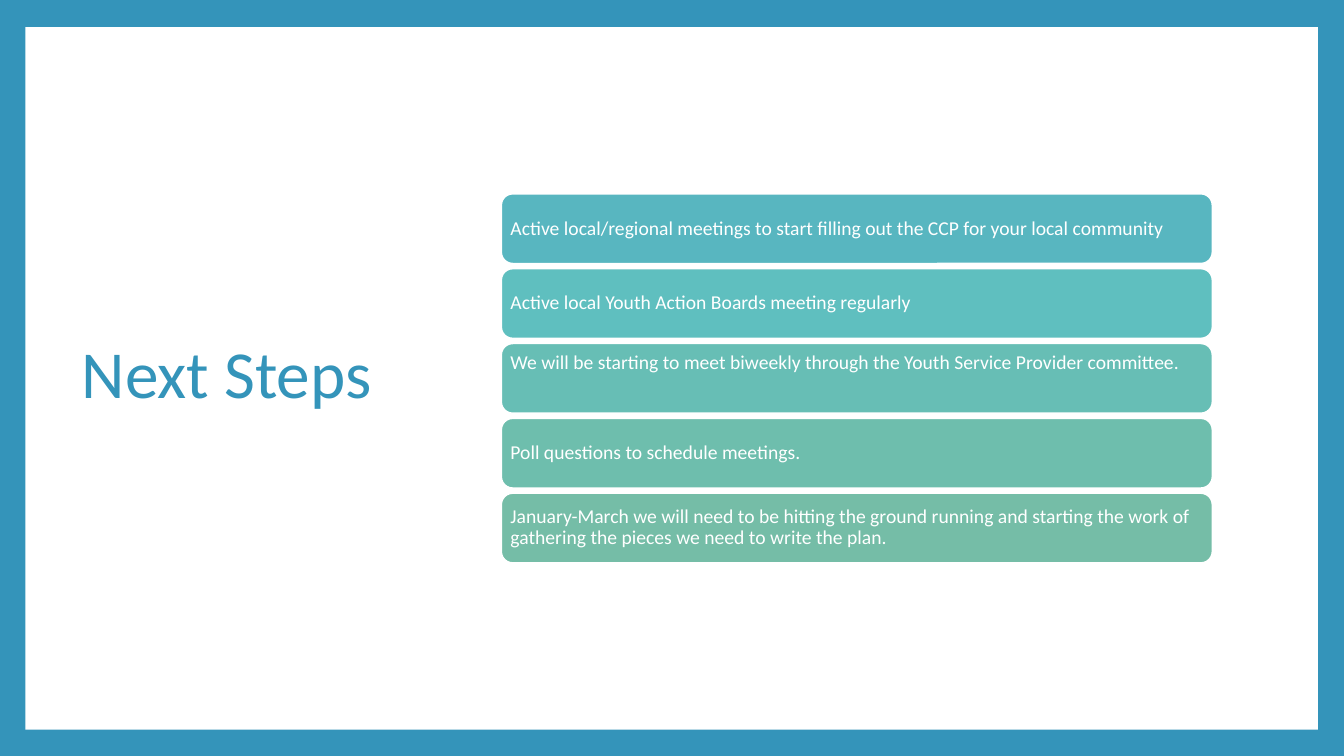
from dataclasses import dataclass

import pptx
import pptx.dml.color
import pptx.enum.shapes
import pptx.enum.text
import pptx.util

SLIDE_WIDTH = pptx.util.Inches(13.33)
SLIDE_HEIGHT = pptx.util.Inches(7.5)
FONT = "Calibri"
COLOURS = {
    "blue": "3494BA",
    "white": "FFFFFF",
    "step 1": "58B6C0",
    "step 2": "5FBFBF",
    "step 3": "67BEB5",
    "step 4": "6EBEAD",
    "step 5": "75BDA7",
}
ANCHOR = pptx.enum.text.MSO_ANCHOR
SHAPE = pptx.enum.shapes.MSO_SHAPE

# Step bars, in percent of the slide's width and height
BAR_LEFT, BAR_WIDTH = 37.28, 52.95
BAR_TOP, BAR_HEIGHT, BAR_PITCH = 25.6, 9.3, 9.9


@dataclass
class Area:
    """A place on the slide, in percent of its width and height."""
    left: float
    top: float
    width: float
    height: float

    def lengths(self) -> tuple[int, int, int, int]:
        return (int(SLIDE_WIDTH * self.left / 100), int(SLIDE_HEIGHT * self.top / 100),
                int(SLIDE_WIDTH * self.width / 100), int(SLIDE_HEIGHT * self.height / 100))


@dataclass
class Step:
    text: str
    colour: str
    anchor: ANCHOR = ANCHOR.MIDDLE


PANEL = Area(1.88, 3.6, 96.17, 92.93)
TITLE = Area(5.33, 8.93, 27.6, 81.73)
STEPS = [
    Step("Active local/regional meetings to start filling out the CCP for your local community",
         "step 1"),
    Step("Active local Youth Action Boards meeting regularly", "step 2"),
    Step("We will be starting to meet biweekly through the Youth Service Provider committee.",
         "step 3", ANCHOR.TOP),
    Step("Poll questions to schedule meetings.", "step 4"),
    Step("January-March we will need to be hitting the ground running and starting the work of "
         "gathering the pieces we need to write the plan.", "step 5"),
]


def colour(name: str) -> pptx.dml.color.RGBColor:
    return pptx.dml.color.RGBColor.from_string(COLOURS[name])


def add_filled_shape(slide, kind: SHAPE, area: Area, fill: str):
    shape = slide.shapes.add_shape(kind, *area.lengths())
    shape.shadow.inherit = False
    shape.fill.solid()
    shape.fill.fore_color.rgb = colour(fill)
    shape.line.fill.background()
    return shape


def write_text(shape, text: str, size: float, text_colour: str, anchor: ANCHOR) -> None:
    text_frame = shape.text_frame
    text_frame.text = text
    text_frame.word_wrap = True
    text_frame.auto_size = pptx.enum.text.MSO_AUTO_SIZE.NONE
    text_frame.vertical_anchor = anchor
    paragraph = text_frame.paragraphs[0]
    paragraph.alignment = pptx.enum.text.PP_ALIGN.LEFT
    paragraph.line_spacing = 0.9
    font = paragraph.runs[0].font
    font.name = FONT
    font.size = pptx.util.Pt(size)
    font.color.rgb = colour(text_colour)


def add_step(slide, row: int, step: Step) -> None:
    area = Area(BAR_LEFT, BAR_TOP + row * BAR_PITCH, BAR_WIDTH, BAR_HEIGHT)
    bar = add_filled_shape(slide, SHAPE.ROUNDED_RECTANGLE, area, step.colour)
    bar.line.color.rgb = colour("white")
    bar.line.width = pptx.util.Pt(1.5)
    text_frame = bar.text_frame
    text_frame.margin_left = text_frame.margin_right = pptx.util.Inches(0.06)
    text_frame.margin_top = text_frame.margin_bottom = pptx.util.Inches(0.06)
    write_text(bar, step.text, 14, "white", step.anchor)


def main() -> None:
    presentation = pptx.Presentation()
    presentation.slide_width = SLIDE_WIDTH
    presentation.slide_height = SLIDE_HEIGHT
    slide = presentation.slides.add_slide(presentation.slide_layouts.get_by_name("Title Only"))

    # Blue frame around a white panel
    slide.background.fill.solid()
    slide.background.fill.fore_color.rgb = colour("blue")
    panel = add_filled_shape(slide, SHAPE.RECTANGLE, PANEL, "white")

    # Title, in front of the panel
    title = slide.shapes.title
    panel.element.addnext(title.element)
    title.left, title.top, title.width, title.height = TITLE.lengths()
    write_text(title, "Next Steps", 48, "blue", ANCHOR.MIDDLE)

    # Step bars
    for row, step in enumerate(STEPS):
        add_step(slide, row, step)

    presentation.save("out.pptx")


if __name__ == "__main__":
    main()
